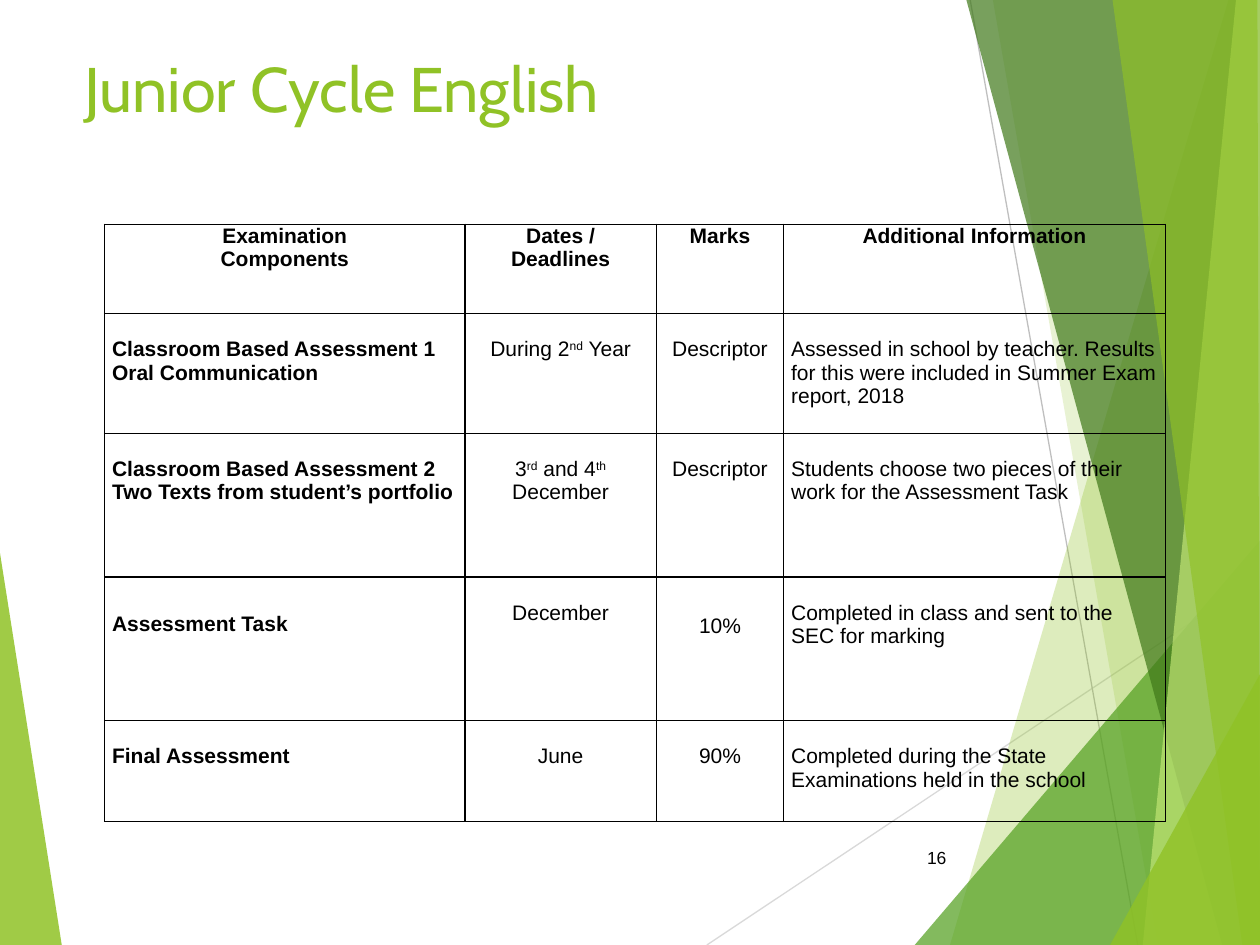
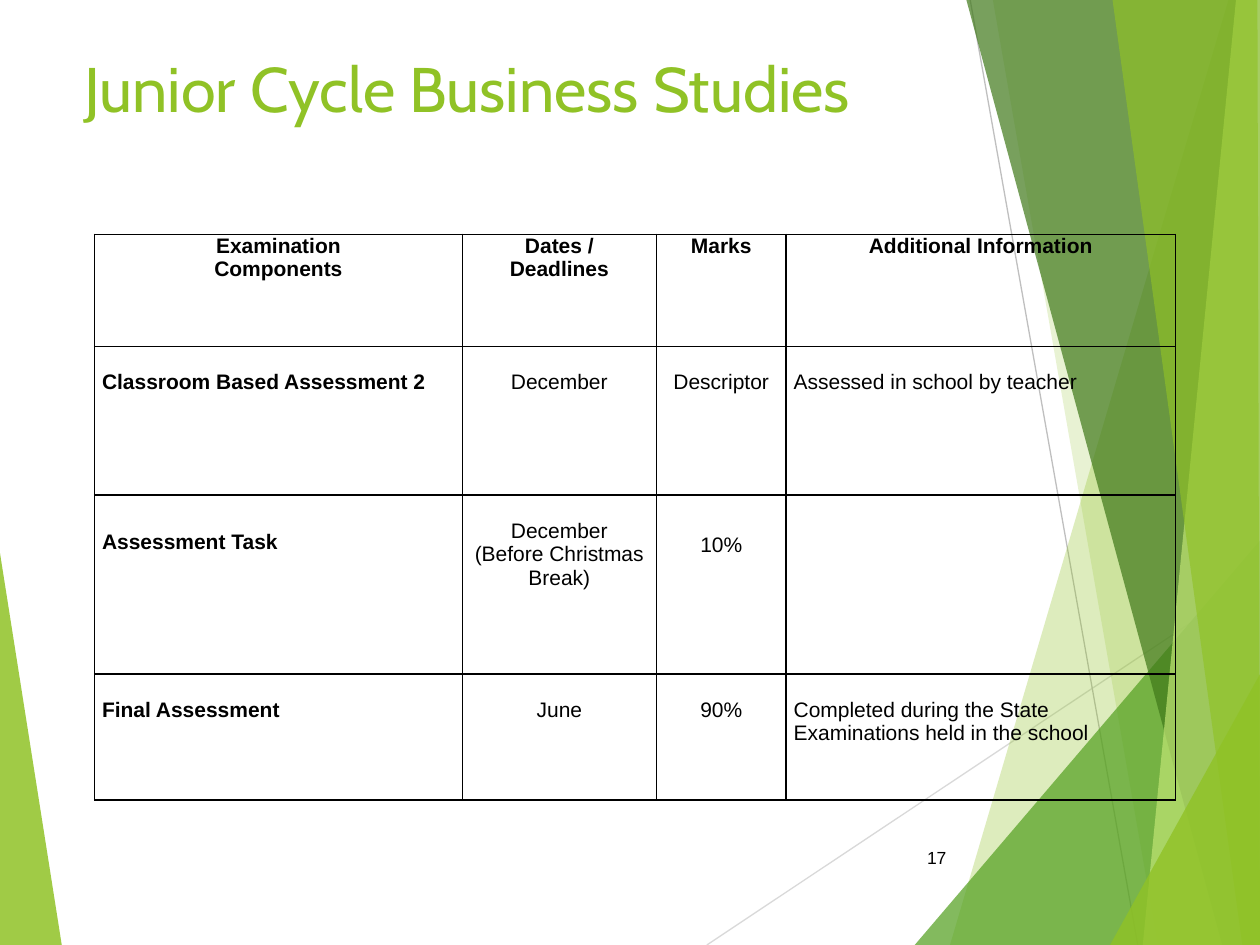
from lxml import etree
from pptx import Presentation
from pptx.dml.color import RGBColor
from pptx.enum.shapes import MSO_CONNECTOR
from pptx.enum.text import MSO_ANCHOR, MSO_AUTO_SIZE, PP_ALIGN
from pptx.oxml.ns import qn
from pptx.util import Inches, Pt

STRAIGHT = MSO_CONNECTOR.STRAIGHT
LEFT, CENTER, RIGHT = PP_ALIGN.LEFT, PP_ALIGN.CENTER, PP_ALIGN.RIGHT
TOP, MIDDLE = MSO_ANCHOR.TOP, MSO_ANCHOR.MIDDLE
NO_AUTOFIT = MSO_AUTO_SIZE.NONE

GREEN, LEAF, FOREST, LIME = "90C226", "54A021", "3F7819", "C0E474"
BLACK, GREY, PALE_GREY = "000000", "BFBFBF", "D9D9D9"
TITLE_FONT, BODY_FONT = "Cabin", "Arial"
TITLE_ONLY = 5

RAYS = [(PALE_GREY, (5.61, 7.5), (10.01, 4.57)),
        (GREY, (7.7, 0), (9.03, 7.5))]
LEFT_SHARD = (GREEN, 85, [(0, 4.39), (0.49, 7.5), (0, 7.5)])
RIGHT_SHARDS = [
    (GREEN, 30, [(9.75, 0), (7.54, 7.5), (10, 7.5), (10, 0)]),
    (GREEN, 20, [(7.88, 0), (9.19, 7.5), (10, 7.5), (10, 0)]),
    (LEAF, 72, [(7.26, 7.5), (10, 4.29), (10, 7.5)]),
    (FOREST, 70, [(7.67, 0), (9.7, 7.5), (10, 7.5), (10, 0)]),
    (LIME, 70, [(9.81, 0), (9.07, 7.5), (10, 7.5), (10, 0)]),
    (GREEN, 65, [(8.83, 0), (9.86, 7.5), (10, 7.5), (9.98, 0)]),
    (GREEN, 80, [(8.81, 7.5), (10, 5.35), (10, 7.5)]),
]

HEADER = ["Examination\nComponents", "Dates /\nDeadlines", "Marks",
          "Additional Information"]
FINAL_ROW = ["Final Assessment", "June", "90%",
             "Completed during the State Examinations held in the school"]
TASK = "Assessment Task"
COLUMN_ALIGNMENTS = [LEFT, CENTER, CENTER, LEFT]
TEXT_DROP = [0.19, 0.19, 0.19, 0.19]
TASK_TEXT_DROP = [0.28, 0.19, 0.3, 0.19]

# Text between carets is superscript.
ENGLISH_ROWS = [
    HEADER,
    ["Classroom Based Assessment 1 Oral Communication", "During 2^nd^ Year",
     "Descriptor", "Assessed in school by teacher. Results for this were "
     "included in Summer Exam report, 2018"],
    ["Classroom Based Assessment 2 Two Texts from student’s portfolio",
     "3^rd^ and 4^th^ December", "Descriptor",
     "Students choose two pieces of their work for the Assessment Task"],
    [TASK, "December", "10%",
     "Completed in class and sent to the SEC for marking"],
    FINAL_ROW,
]
BUSINESS_ROWS = [
    HEADER,
    ["Classroom Based Assessment 2", "December", "Descriptor",
     "Assessed in school by teacher"],
    [TASK, "December\n(Before Christmas Break)", "10%", ""],
    FINAL_ROW,
]


def color(value):
    return RGBColor.from_string(value)


def format_run(run, font, size, hex_color, bold=False):
    run.font.name = font
    run.font.size = Pt(size)
    run.font.bold = bold
    run.font.color.rgb = color(hex_color)


def add_ray(slide, hex_color, start, end):
    ray = slide.shapes.add_connector(
        STRAIGHT, *[Inches(value) for value in start + end])
    ray.line.color.rgb = color(hex_color)
    ray.line.width = Pt(0.75)
    etree.SubElement(ray.element.spPr, qn("a:effectLst"))
    return ray


def add_shard(slide, hex_color, opacity, corners):
    points = [(Inches(x), Inches(y)) for x, y in corners]
    builder = slide.shapes.build_freeform(*points[0])
    builder.add_line_segments(points[1:], close=True)
    shard = builder.convert_to_shape()
    shard.shadow.inherit = False
    shard.line.fill.background()
    shard.fill.solid()
    shard.fill.fore_color.rgb = color(hex_color)
    fill_color = shard.element.spPr.find(f"{qn('a:solidFill')}/{qn('a:srgbClr')}")
    etree.SubElement(fill_color, qn("a:alpha"), val=str(opacity * 1000))
    return shard


def decorate_layout(slide):
    """Draw the background shapes, then move them to the slide's layout."""
    shapes = [add_shard(slide, *LEFT_SHARD)]
    shapes += [add_ray(slide, *ray) for ray in RAYS]
    shapes += [add_shard(slide, *shard) for shard in RIGHT_SHARDS]
    for shape in shapes:
        slide.slide_layout.shapes.element.append(shape.element)


def set_title(slide, text):
    title = slide.shapes.title
    title.left, title.top = Inches(0.57), Inches(0.34)
    title.width, title.height = Inches(9), Inches(1.25)
    frame = title.text_frame
    frame.text = text
    frame.auto_size = NO_AUTOFIT
    frame.vertical_anchor = TOP
    paragraph = frame.paragraphs[0]
    paragraph.alignment = LEFT
    format_run(paragraph.runs[0], TITLE_FONT, 36, GREEN)


def add_page_number(slide, number):
    box = slide.shapes.add_textbox(
        Inches(7.05), Inches(6.61), Inches(0.56), Inches(0.4))
    frame = box.text_frame
    frame.text = str(number)
    frame.word_wrap = True
    frame.vertical_anchor = MIDDLE
    paragraph = frame.paragraphs[0]
    paragraph.alignment = RIGHT
    format_run(paragraph.runs[0], BODY_FONT, 10, BLACK)


def set_borders(cell):
    properties = cell._tc.get_or_add_tcPr()
    for index, side in enumerate(["lnL", "lnR", "lnT", "lnB"]):
        border = etree.Element(qn(f"a:{side}"), w=str(Pt(1)))
        fill = etree.SubElement(border, qn("a:solidFill"))
        etree.SubElement(fill, qn("a:srgbClr"), val=BLACK)
        properties.insert(index, border)


def fill_cell(cell, text, alignment, bold, drop):
    cell.fill.background()
    cell.margin_left = cell.margin_right = Inches(0.06)
    cell.margin_top, cell.margin_bottom = Inches(drop), 0
    set_borders(cell)
    cell.text_frame.text = text
    for paragraph in cell.text_frame.paragraphs:
        paragraph.alignment = alignment
        pieces = paragraph.text.split("^")
        paragraph.text = pieces[0]
        for piece in pieces[1:]:
            paragraph.add_run().text = piece
        for index, run in enumerate(paragraph.runs):
            format_run(run, BODY_FONT, 12, BLACK, bold)
            if index % 2:
                run._r.get_or_add_rPr().set("baseline", "30000")


def add_exam_table(slide, left, top, widths, heights, rows):
    frame = slide.shapes.add_table(
        len(rows), len(widths), Inches(left), Inches(top),
        Inches(sum(widths)), Inches(sum(heights)))
    table = frame.table
    table.first_row = table.horz_banding = False
    for column, width in zip(table.columns, widths):
        column.width = Inches(width)
    for row_index, (texts, height) in enumerate(zip(rows, heights)):
        table.rows[row_index].height = Inches(height)
        is_header = row_index == 0
        drops = TASK_TEXT_DROP if texts[0] == TASK else TEXT_DROP
        for column_index, text in enumerate(texts):
            fill_cell(
                table.cell(row_index, column_index), text,
                CENTER if is_header else COLUMN_ALIGNMENTS[column_index],
                is_header or column_index == 0,
                0 if is_header else drops[column_index])


def add_subject_slide(presentation, title, number):
    slide = presentation.slides.add_slide(
        presentation.slide_layouts[TITLE_ONLY])
    set_title(slide, title)
    add_page_number(slide, number)
    return slide


def main():
    presentation = Presentation()
    presentation.slide_width = Inches(10)
    presentation.slide_height = Inches(7.5)

    english = add_subject_slide(presentation, "Junior Cycle English", 16)
    decorate_layout(english)
    add_exam_table(english, 0.83, 1.78, [2.86, 1.52, 1.01, 3.03],
                   [0.71, 0.95, 1.14, 1.14, 0.8], ENGLISH_ROWS)

    business = add_subject_slide(
        presentation, "Junior Cycle Business Studies", 17)
    add_exam_table(business, 0.75, 1.86, [2.92, 1.54, 1.03, 3.09],
                   [0.89, 1.18, 1.42, 1], BUSINESS_ROWS)

    presentation.save("out.pptx")


if __name__ == "__main__":
    main()
